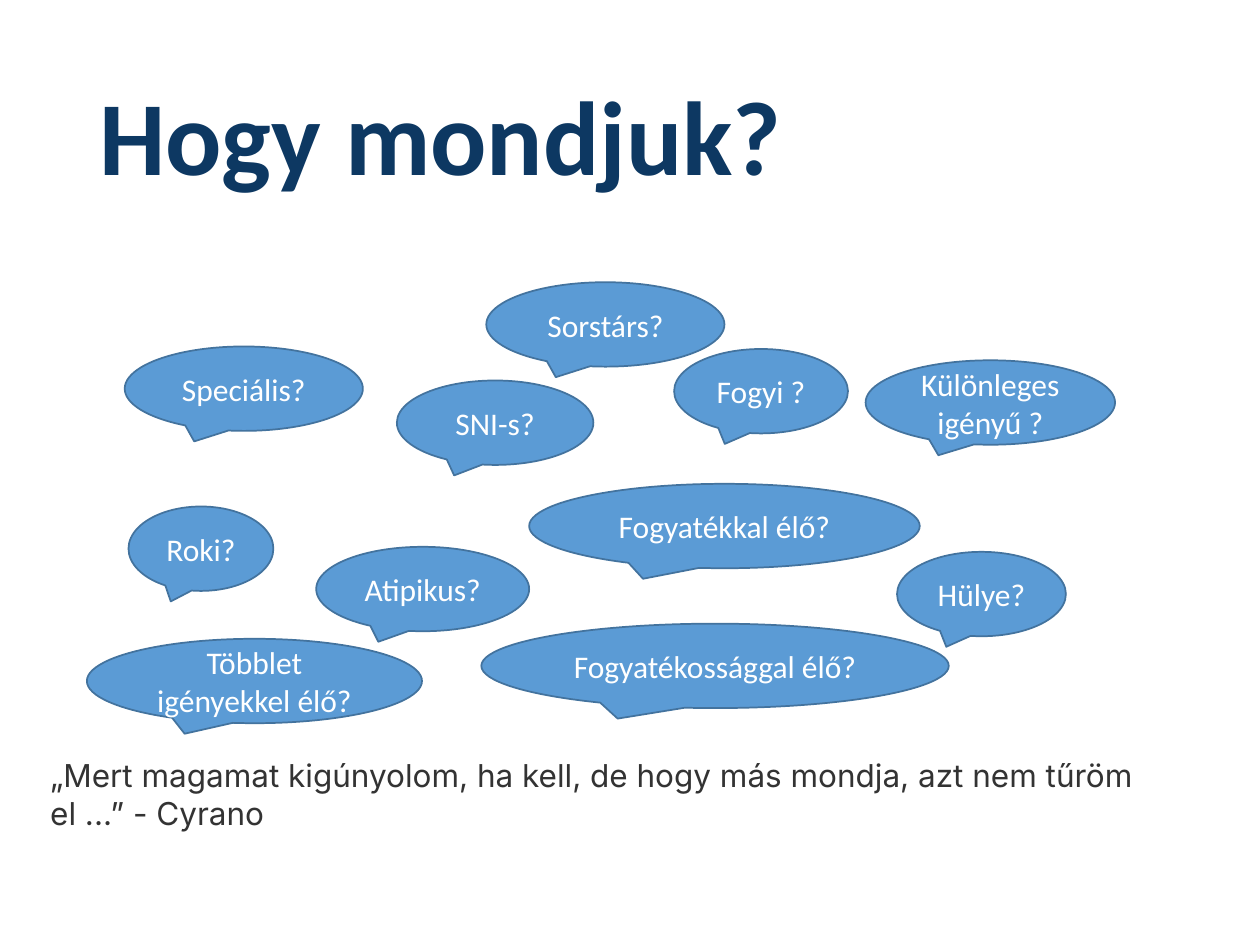
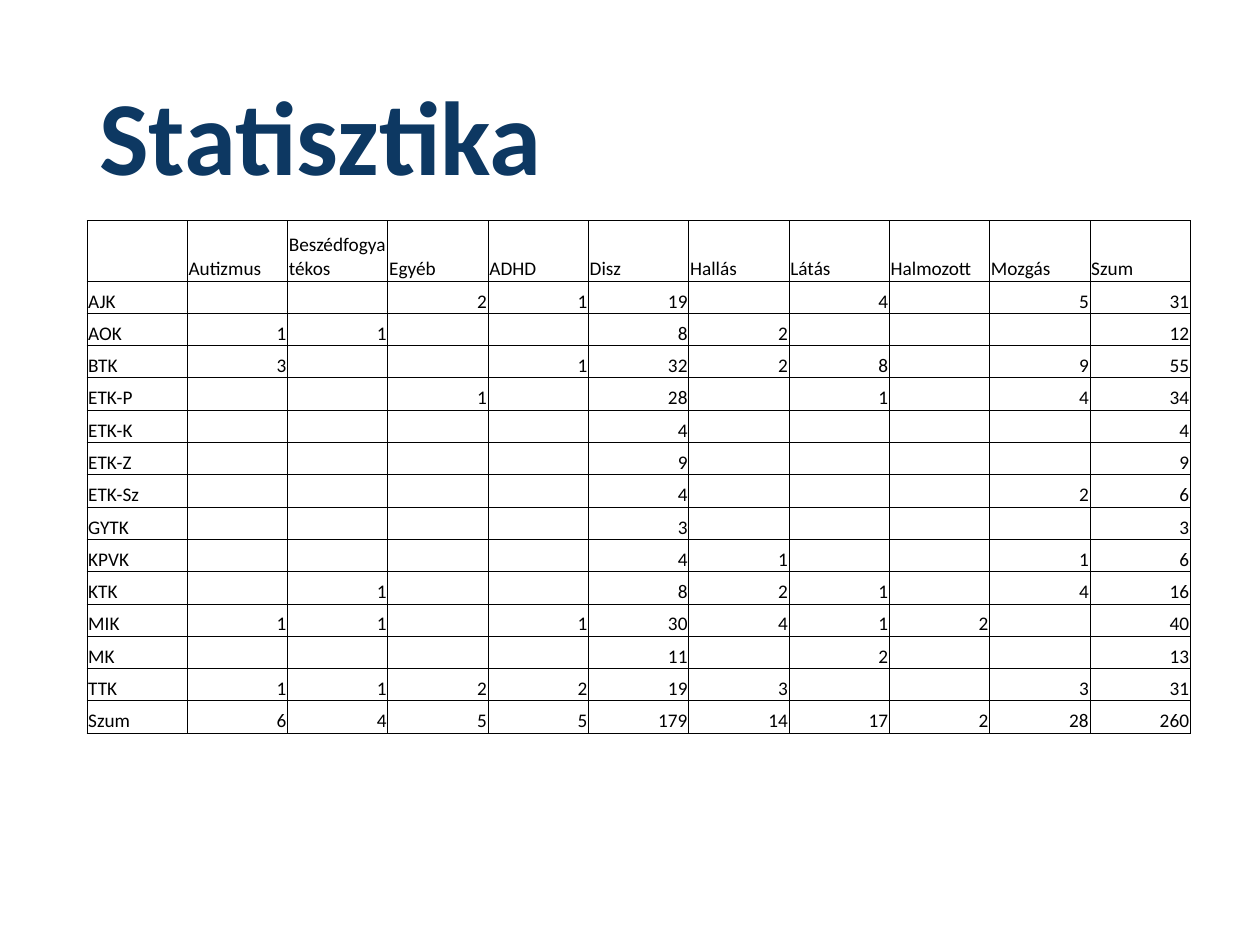
"""Build two slides: speech bubbles with names for disability, and a table of student numbers."""
from lxml import etree
from pptx import Presentation
from pptx.dml.color import RGBColor
from pptx.enum.shapes import MSO_SHAPE
from pptx.enum.text import MSO_ANCHOR, PP_ALIGN
from pptx.oxml.ns import qn
from pptx.util import Inches, Pt

BUBBLE = MSO_SHAPE.OVAL_CALLOUT
MIDDLE, BOTTOM = MSO_ANCHOR.MIDDLE, MSO_ANCHOR.BOTTOM
LEFT, CENTER, RIGHT = PP_ALIGN.LEFT, PP_ALIGN.CENTER, PP_ALIGN.RIGHT

COLORS = {"title": "0D3862", "bubble": "5B9BD5", "outline": "43739E",
          "label": "FFFFFF", "quote": "333333", "table": "000000"}
FONT, QUOTE_FONT = "Calibri", "Inter"

BUBBLE_TITLE = "Hogy mondjuk?"
BUBBLE_HEIGHT = 0.67
BUBBLES = [
    ("Hülye?", 7.12, 4.38, 1.34),
    ("Atipikus?", 2.51, 4.34, 1.69),
    ("Speciális?", 0.99, 2.75, 1.89),
    ("SNI-s?", 3.15, 3.02, 1.56),
    ("Roki?", 1.02, 4.02, 1.15),
    ("Fogyi ?", 5.35, 2.77, 1.38),
    ("Különleges igényű ?", 6.87, 2.86, 1.98),
    ("Többlet igényekkel élő?", 0.69, 5.07, 2.66),
    ("Fogyatékossággal élő?", 3.82, 4.95, 3.71),
    ("Fogyatékkal élő?", 4.2, 3.84, 3.1),
    ("Sorstárs?", 3.86, 2.24, 1.89),
]
QUOTE = "„Mert magamat kigúnyolom, ha kell, de hogy más mondja, azt nem tűröm el ...” - Cyrano"

TABLE_TITLE = "Statisztika"
TABLE_LEFT, TABLE_TOP, TABLE_WIDTH, TABLE_HEIGHT = 0.69, 1.75, 8.76, 4.07
HEADER_HEIGHT = 0.48
TABLE = [
    ("", "Autizmus", "Beszédfogyatékos", "Egyéb", "ADHD", "Disz",
     "Hallás", "Látás", "Halmozott", "Mozgás", "Szum"),
    ("AJK", "", "", 2, 1, 19, "", 4, "", 5, 31),
    ("AOK", 1, 1, "", "", 8, 2, "", "", "", 12),
    ("BTK", 3, "", "", 1, 32, 2, 8, "", 9, 55),
    ("ETK-P", "", "", 1, "", 28, "", 1, "", 4, 34),
    ("ETK-K", "", "", "", "", 4, "", "", "", "", 4),
    ("ETK-Z", "", "", "", "", 9, "", "", "", "", 9),
    ("ETK-Sz", "", "", "", "", 4, "", "", "", 2, 6),
    ("GYTK", "", "", "", "", 3, "", "", "", "", 3),
    ("KPVK", "", "", "", "", 4, 1, "", "", 1, 6),
    ("KTK", "", 1, "", "", 8, 2, 1, "", 4, 16),
    ("MIK", 1, 1, "", 1, 30, 4, 1, 2, "", 40),
    ("MK", "", "", "", "", 11, "", 2, "", "", 13),
    ("TTK", 1, 1, 2, 2, 19, 3, "", "", 3, 31),
    ("Szum", 6, 4, 5, 5, 179, 14, 17, 2, 28, 260),
]


def rgb(name):
    return RGBColor.from_string(COLORS[name])


def write(tf, text, size, color, font=FONT, align=LEFT, bold=False):
    tf.word_wrap = True
    p = tf.paragraphs[0]
    p.text = text
    p.alignment = align
    p.font.size, p.font.name, p.font.bold = Pt(size), font, bold
    p.font.color.rgb = rgb(color)
    return p


def add_text(s, box, *args, **style):
    tf = s.shapes.add_textbox(*map(Inches, box)).text_frame
    return tf, write(tf, *args, **style)


def add_slide(prs, title):
    s = prs.slides.add_slide(prs.slide_layouts[6])
    tf, p = add_text(s, (0.69, 0.4, 8.62, 1.45), title, 60, "title", bold=True)
    tf.vertical_anchor = MIDDLE
    p.line_spacing = 0.9
    return s


def add_bubble(s, text, left, top, width):
    sp = s.shapes.add_shape(BUBBLE, *map(Inches, (left, top, width, BUBBLE_HEIGHT)))
    sp.shadow.inherit = False
    sp.fill.solid()
    sp.fill.fore_color.rgb = rgb("bubble")
    sp.line.color.rgb = rgb("outline")
    sp.line.width = Pt(1)
    sp.text_frame.vertical_anchor = MIDDLE
    write(sp.text_frame, text, 18, "label", align=CENTER)


def add_borders(cell):
    tc_pr = cell._tc.get_or_add_tcPr()
    for i, side in enumerate(("lnL", "lnR", "lnT", "lnB")):
        ln = etree.Element(qn(f"a:{side}"), w=str(Pt(0.5)))
        fill = etree.SubElement(ln, qn("a:solidFill"))
        etree.SubElement(fill, qn("a:srgbClr"), val=COLORS["table"])
        tc_pr.insert(i, ln)


def fill_cell(cell, value):
    cell.fill.background()
    add_borders(cell)
    cell.margin_left = cell.margin_right = cell.margin_top = Inches(0.01)
    cell.margin_bottom = 0
    cell.vertical_anchor = BOTTOM
    align = RIGHT if isinstance(value, int) else LEFT
    p = write(cell.text_frame, str(value), 11, "table", align=align)
    if value == "":
        etree.SubElement(p._p, qn("a:endParaRPr"), sz="1100")


def add_statistics(s):
    box = map(Inches, (TABLE_LEFT, TABLE_TOP, TABLE_WIDTH, TABLE_HEIGHT))
    table = s.shapes.add_table(len(TABLE), len(TABLE[0]), *box).table
    table.first_row = table.horz_banding = False
    for column in table.columns:
        column.width = Inches(TABLE_WIDTH / len(TABLE[0]))
    row_height = (TABLE_HEIGHT - HEADER_HEIGHT) / (len(TABLE) - 1)
    for i, values in enumerate(TABLE):
        table.rows[i].height = Inches(row_height if i else HEADER_HEIGHT)
        for j, value in enumerate(values):
            fill_cell(table.cell(i, j), value)


def main():
    prs = Presentation()
    prs.slide_width, prs.slide_height = Inches(10), Inches(7.5)
    s = add_slide(prs, BUBBLE_TITLE)
    for bubble in BUBBLES:
        add_bubble(s, *bubble)
    add_text(s, (0.3, 5.95, 9.3, 0.4), QUOTE, 18, "quote", font=QUOTE_FONT)
    add_statistics(add_slide(prs, TABLE_TITLE))
    prs.save("out.pptx")


if __name__ == "__main__":
    main()
